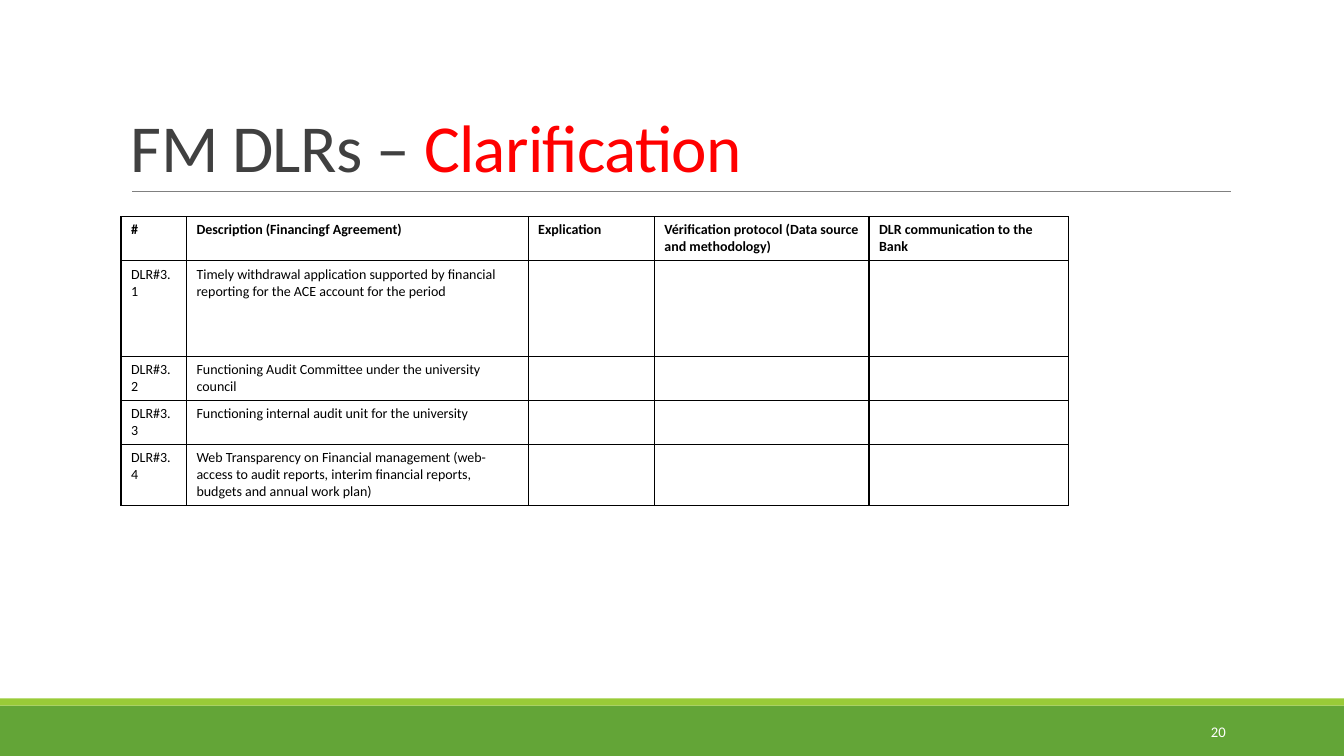
from lxml import etree
from pptx import Presentation
from pptx.dml.color import RGBColor
from pptx.enum.shapes import MSO_CONNECTOR, MSO_SHAPE
from pptx.enum.text import MSO_ANCHOR, PP_ALIGN
from pptx.oxml.ns import qn
from pptx.util import Cm, Pt

RECT = MSO_SHAPE.RECTANGLE
STRAIGHT = MSO_CONNECTOR.STRAIGHT
BOTTOM, MIDDLE = MSO_ANCHOR.BOTTOM, MSO_ANCHOR.MIDDLE
LEFT, RIGHT = PP_ALIGN.LEFT, PP_ALIGN.RIGHT

FONT = "Calibri"
COLORS = {
    "green": "63A537",
    "lime": "99CB38",
    "rule": "808080",
    "title": "404040",
    "accent": "FF0000",
    "black": "000000",
    "white": "FFFFFF",
}
SLIDE_W, SLIDE_H = 33.87, 19.05

COL_WIDTHS = [1.65, 8.61, 3.18, 5.41, 5.03]
ROW_HEIGHTS = [1.11, 2.41, 1.11, 1.11, 1.54]
HEADERS = [
    "#",
    "Description (Financingf Agreement)",
    "Explication",
    "Vérification protocol (Data source and methodology)",
    "DLR communication to the Bank",
]
DESCRIPTIONS = [
    "Timely withdrawal application supported by financial reporting "
    "for the ACE account for the period",
    "Functioning Audit Committee under the university council",
    "Functioning internal audit unit for the university",
    "Web Transparency on Financial management (web-access to audit reports, "
    "interim financial reports, budgets and annual work plan)",
]


def rgb(name):
    return RGBColor.from_string(COLORS[name])


def add_run(p, text, size, color, bold=False):
    r = p.add_run()
    r.text = text
    r.font.name = FONT
    r.font.size = Pt(size)
    r.font.bold = bold
    r.font.color.rgb = rgb(color)
    return r


def add_band(s, top, height, color):
    sp = s.shapes.add_shape(RECT, 0, Cm(top), Cm(SLIDE_W), Cm(height))
    sp.shadow.inherit = False
    sp.fill.solid()
    sp.fill.fore_color.rgb = rgb(color)
    sp.line.fill.background()


def add_rule(s, x1, x2, y):
    line = s.shapes.add_connector(STRAIGHT, Cm(x1), Cm(y), Cm(x2), Cm(y))
    line.line.color.rgb = rgb("rule")
    line.line.width = Pt(0.5)
    etree.SubElement(line._element.spPr, qn("a:effectLst"))


def add_text(s, x, y, w, h, anchor, align=LEFT):
    tf = s.shapes.add_textbox(Cm(x), Cm(y), Cm(w), Cm(h)).text_frame
    tf.word_wrap = True
    tf.vertical_anchor = anchor
    p = tf.paragraphs[0]
    p.alignment = align
    return p


def add_title(s):
    p = add_text(s, 3.05, 0.79, 27.94, 4.04, BOTTOM)
    p.line_spacing = 0.85
    for text, color in (("FM DLRs – ", "title"), ("Clarification", "accent")):
        r = add_run(p, text, 48, color)
        r.font._element.set("spc", "-50")


def set_borders(cell):
    tcPr = cell._tc.get_or_add_tcPr()
    for i, side in enumerate(("lnL", "lnR", "lnT", "lnB")):
        ln = etree.Element(qn(f"a:{side}"), w=str(Pt(1)))
        fill = etree.SubElement(ln, qn("a:solidFill"))
        etree.SubElement(fill, qn("a:srgbClr"), val=COLORS["black"])
        tcPr.insert(i, ln)


def add_grid(s, x, y, rows):
    frame = s.shapes.add_table(len(rows), len(COL_WIDTHS), Cm(x), Cm(y),
                               Cm(sum(COL_WIDTHS)), Cm(sum(ROW_HEIGHTS)))
    table = frame.table
    table.first_row = table.horz_banding = False
    for col, width in zip(table.columns, COL_WIDTHS):
        col.width = Cm(width)
    for i, (height, texts) in enumerate(zip(ROW_HEIGHTS, rows)):
        table.rows[i].height = Cm(height)
        for cell, text in zip(table.rows[i].cells, texts):
            cell.fill.background()
            set_borders(cell)
            p = cell.text_frame.paragraphs[0]
            if text:
                add_run(p, text, 10, "black", bold=i == 0)
            else:
                p.font.size = Pt(10)


def main():
    prs = Presentation()
    prs.slide_width, prs.slide_height = Cm(SLIDE_W), Cm(SLIDE_H)
    s = prs.slides.add_slide(prs.slide_layouts[6])

    # Footer bands and title rule
    add_band(s, 17.78, 1.27, "green")
    add_band(s, 17.6, 0.18, "lime")
    add_rule(s, 3.33, 31.01, 4.83)

    # Title
    add_title(s)

    # Table of results
    rows = [HEADERS]
    for n, description in enumerate(DESCRIPTIONS, 1):
        rows.append([f"DLR#3.{n}", description, "", "", ""])
    add_grid(s, 3.05, 5.46, rows)

    # Slide number
    p = add_text(s, 27.51, 17.93, 3.63, 1.02, MIDDLE, RIGHT)
    add_run(p, "20", 10.5, "white")

    prs.save("out.pptx")


if __name__ == "__main__":
    main()
